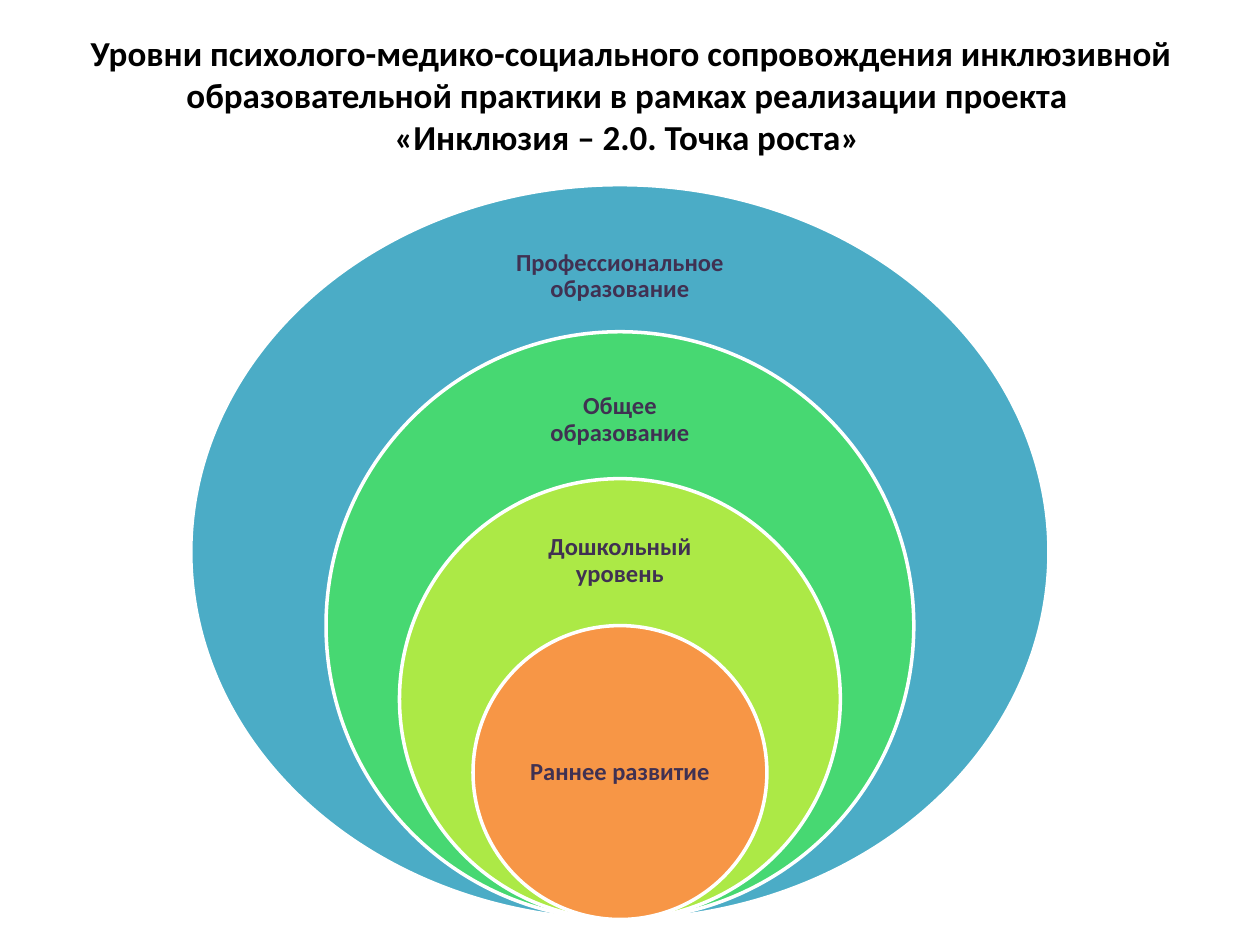
from dataclasses import dataclass

import pptx
import pptx.dml.color
import pptx.enum.shapes
import pptx.enum.text
import pptx.util

Inches = pptx.util.Inches
Color = pptx.dml.color.RGBColor.from_string

SLIDE_WIDTH, SLIDE_HEIGHT = 10, 7.5
CENTER_X = 0.492 * SLIDE_WIDTH
RINGS_BOTTOM = 0.973 * SLIDE_HEIGHT
RING_STEP = 0.1555 * SLIDE_HEIGHT


@dataclass(frozen=True)
class Theme:
    font: str = "Calibri"
    title_size: float = 20
    label_size: float = 14
    outline_width: float = 2
    title: str = "000000"
    label: str = "403152"
    outline: str = "FFFFFF"
    background: str = "FFFFFF"


@dataclass(frozen=True)
class Level:
    """Ring height counts steps; label lengths are shares of the ring's size."""
    text: str
    fill: str
    steps: int
    label_top: float
    label_width: float
    label_height: float
    aspect: float = 1


THEME = Theme()
TITLE = ("Уровни психолого-медико-социального сопровождения инклюзивной "
         "образовательной практики в рамках реализации проекта \v"
         "«Инклюзия – 2.0. Точка роста» ")
LEVELS = [
    Level("Профессиональное образование", "4BACC6", 5, 0.05, 0.28, 0.15, 1.168),
    Level("Общее образование", "47D872", 4, 0.06, 0.35, 0.18),
    Level("Дошкольный уровень", "ACE946", 3, 0.075, 0.466, 0.225),
    Level("Раннее развитие", "F79646", 2, 0.25, 0.707, 0.5),
]


def format_text(text_frame, size: float, color: str) -> None:
    text_frame.word_wrap = True
    text_frame.auto_size = pptx.enum.text.MSO_AUTO_SIZE.NONE
    text_frame.vertical_anchor = pptx.enum.text.MSO_ANCHOR.MIDDLE
    for paragraph in text_frame.paragraphs:
        paragraph.alignment = pptx.enum.text.PP_ALIGN.CENTER
        paragraph.font.name = THEME.font
        paragraph.font.size = pptx.util.Pt(size)
        paragraph.font.bold = True
        paragraph.font.color.rgb = Color(color)


def add_title(slide) -> None:
    title = slide.shapes.title
    title.left, title.top = Inches(0.051 * SLIDE_WIDTH), Inches(0.017 * SLIDE_HEIGHT)
    title.width, title.height = Inches(0.9 * SLIDE_WIDTH), Inches(SLIDE_HEIGHT / 6)
    title.text_frame.text = TITLE
    format_text(title.text_frame, THEME.title_size, THEME.title)


def add_level(slide, level: Level) -> None:
    """Draw one ring resting on the common bottom, with its label."""
    height = level.steps * RING_STEP
    width = height * level.aspect
    top = RINGS_BOTTOM - height
    ring = slide.shapes.add_shape(
        pptx.enum.shapes.MSO_SHAPE.OVAL,
        Inches(CENTER_X - width / 2), Inches(top), Inches(width), Inches(height))
    ring.shadow.inherit = False
    ring.fill.solid()
    ring.fill.fore_color.rgb = Color(level.fill)
    ring.line.color.rgb = Color(THEME.outline)
    ring.line.width = pptx.util.Pt(THEME.outline_width)

    label_width = width * level.label_width
    label = slide.shapes.add_textbox(
        Inches(CENTER_X - label_width / 2), Inches(top + height * level.label_top),
        Inches(label_width), Inches(height * level.label_height))
    frame = label.text_frame
    frame.margin_left = frame.margin_right = Inches(0.11)
    frame.margin_top = frame.margin_bottom = Inches(0.11)
    frame.text = level.text
    format_text(frame, THEME.label_size, THEME.label)
    frame.paragraphs[0].line_spacing = 0.9


def main() -> None:
    presentation = pptx.Presentation()
    presentation.slide_width = Inches(SLIDE_WIDTH)
    presentation.slide_height = Inches(SLIDE_HEIGHT)
    title_only = presentation.slide_layouts.get_by_name("Title Only")
    slide = presentation.slides.add_slide(title_only)
    slide.background.fill.solid()
    slide.background.fill.fore_color.rgb = Color(THEME.background)
    add_title(slide)
    for level in LEVELS:
        add_level(slide, level)
    presentation.save("out.pptx")


if __name__ == "__main__":
    main()
